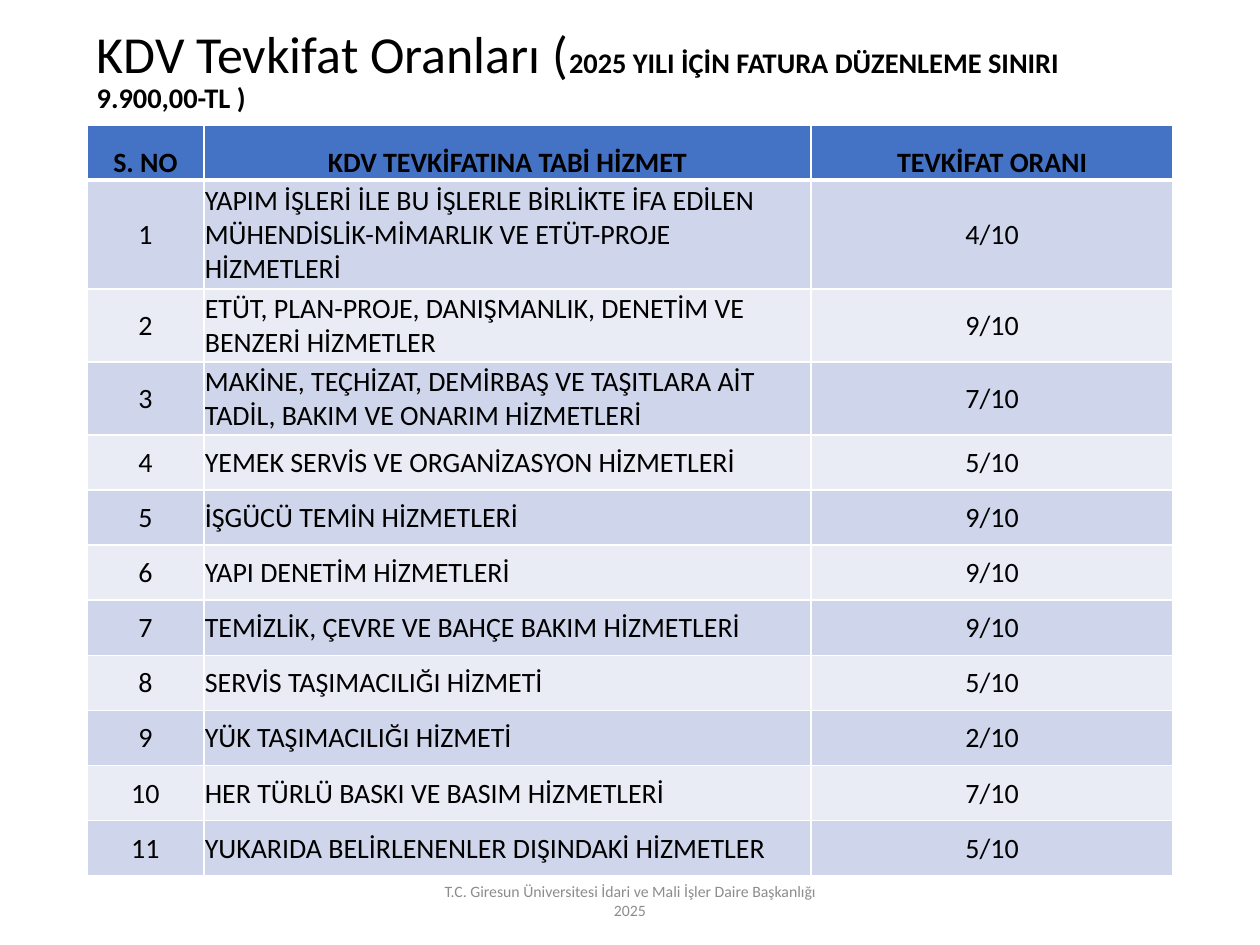
from lxml import etree
from pptx import Presentation
from pptx.dml.color import RGBColor
from pptx.enum.text import MSO_ANCHOR, PP_ALIGN
from pptx.oxml.ns import qn
from pptx.util import Cm, Pt

CENTER, LEFT = PP_ALIGN.CENTER, PP_ALIGN.LEFT
MIDDLE, BOTTOM = MSO_ANCHOR.MIDDLE, MSO_ANCHOR.BOTTOM

FONT = "Calibri"
COLORS = {
    "text": "000000",
    "footer": "8C8C8C",
    "header": "4472C4",
    "odd": "CFD5EA",
    "even": "E9EBF5",
    "border": "FFFFFF",
}

TITLE = [
    ("KDV Tevkifat Oranları (", 29.7, False),
    ("2025 YILI İÇİN FATURA DÜZENLEME SINIRI 9.900,00-TL )", 16.2, True),
]
FOOTER = [("T.C. Giresun Üniversitesi İdari ve Mali İşler Daire Başkanlığı 2025", 9, False)]
HEADER = ("S. NO", "KDV TEVKİFATINA TABİ HİZMET", "TEVKİFAT ORANI")
SERVICES = [
    ("YAPIM İŞLERİ İLE BU İŞLERLE BİRLİKTE İFA EDİLEN MÜHENDİSLİK-MİMARLIK VE ETÜT-PROJE HİZMETLERİ", "4/10"),
    ("ETÜT, PLAN-PROJE, DANIŞMANLIK, DENETİM VE BENZERİ HİZMETLER", "9/10"),
    ("MAKİNE, TEÇHİZAT, DEMİRBAŞ VE TAŞITLARA AİT TADİL, BAKIM VE ONARIM HİZMETLERİ", "7/10"),
    ("YEMEK SERVİS VE ORGANİZASYON HİZMETLERİ", "5/10"),
    ("İŞGÜCÜ TEMİN HİZMETLERİ", "9/10"),
    ("YAPI DENETİM HİZMETLERİ", "9/10"),
    ("TEMİZLİK, ÇEVRE VE BAHÇE BAKIM HİZMETLERİ", "9/10"),
    ("SERVİS TAŞIMACILIĞI HİZMETİ", "5/10"),
    ("YÜK TAŞIMACILIĞI HİZMETİ", "2/10"),
    ("HER TÜRLÜ BASKI VE BASIM HİZMETLERİ", "7/10"),
    ("YUKARIDA BELİRLENENLER DIŞINDAKİ HİZMETLER", "5/10"),
]

COLUMN_WIDTHS = (2.36, 12.24, 7.3)
ROW_HEIGHT = 1.11
TALL_ROWS = {1: 2.2, 2: 1.47, 3: 1.47}


def add_runs(paragraph, runs, color, alignment):
    paragraph.alignment = alignment
    for text, size, bold in runs:
        run = paragraph.add_run()
        run.text = text
        run.font.name = FONT
        run.font.size = Pt(size)
        run.font.bold = bold
        run.font.color.rgb = RGBColor.from_string(COLORS[color])


def add_text(slide, box, runs, color, alignment):
    frame = slide.shapes.add_textbox(*(Cm(value) for value in box)).text_frame
    frame.word_wrap = True
    frame.vertical_anchor = MIDDLE
    paragraph = frame.paragraphs[0]
    add_runs(paragraph, runs, color, alignment)
    return paragraph


def set_borders(cell, widths):
    properties = cell._tc.get_or_add_tcPr()
    for side, width in widths.items():
        line = etree.SubElement(properties, qn(f"a:ln{side}"), w=str(Pt(width)))
        fill = etree.SubElement(line, qn("a:solidFill"))
        etree.SubElement(fill, qn("a:srgbClr"), val=COLORS["border"])


def fill_cell(cell, text, row, column):
    is_header = row == 0
    cell.margin_left = cell.margin_right = cell.margin_top = Cm(0.02)
    cell.margin_bottom = 0
    cell.vertical_anchor = BOTTOM if is_header else MIDDLE
    set_borders(cell, {
        "L": 1, "R": 1,
        "T": 3 if row == 1 else 1,
        "B": 3 if is_header else 1,
    })
    color = "header" if is_header else "odd" if row % 2 else "even"
    cell.fill.solid()
    cell.fill.fore_color.rgb = RGBColor.from_string(COLORS[color])
    alignment = LEFT if column == 1 and not is_header else CENTER
    add_runs(cell.text_frame.paragraphs[0], [(text, 16, is_header)], "text", alignment)


def add_rate_table(slide):
    rows = [HEADER] + [(str(number), *service) for number, service in enumerate(SERVICES, 1)]
    heights = [TALL_ROWS.get(row, ROW_HEIGHT) for row in range(len(rows))]
    table = slide.shapes.add_table(
        len(rows), len(HEADER), Cm(1.75), Cm(2.52),
        Cm(sum(COLUMN_WIDTHS)), Cm(sum(heights)),
    ).table
    for column, width in zip(table.columns, COLUMN_WIDTHS):
        column.width = Cm(width)
    for row, (texts, height) in enumerate(zip(rows, heights)):
        table.rows[row].height = Cm(height)
        for column, text in enumerate(texts):
            fill_cell(table.cell(row, column), text, row, column)


def main():
    presentation = Presentation()
    presentation.slide_width, presentation.slide_height = Cm(25.4), Cm(19.05)
    slide = presentation.slides.add_slide(presentation.slide_layouts[6])
    title = add_text(slide, (1.7, 0.38, 21.9, 2.13), TITLE, "text", LEFT)
    title.line_spacing = 0.9
    add_rate_table(slide)
    add_text(slide, (8.41, 17.65, 8.58, 1.02), FOOTER, "footer", CENTER)
    presentation.save("out.pptx")


if __name__ == "__main__":
    main()
